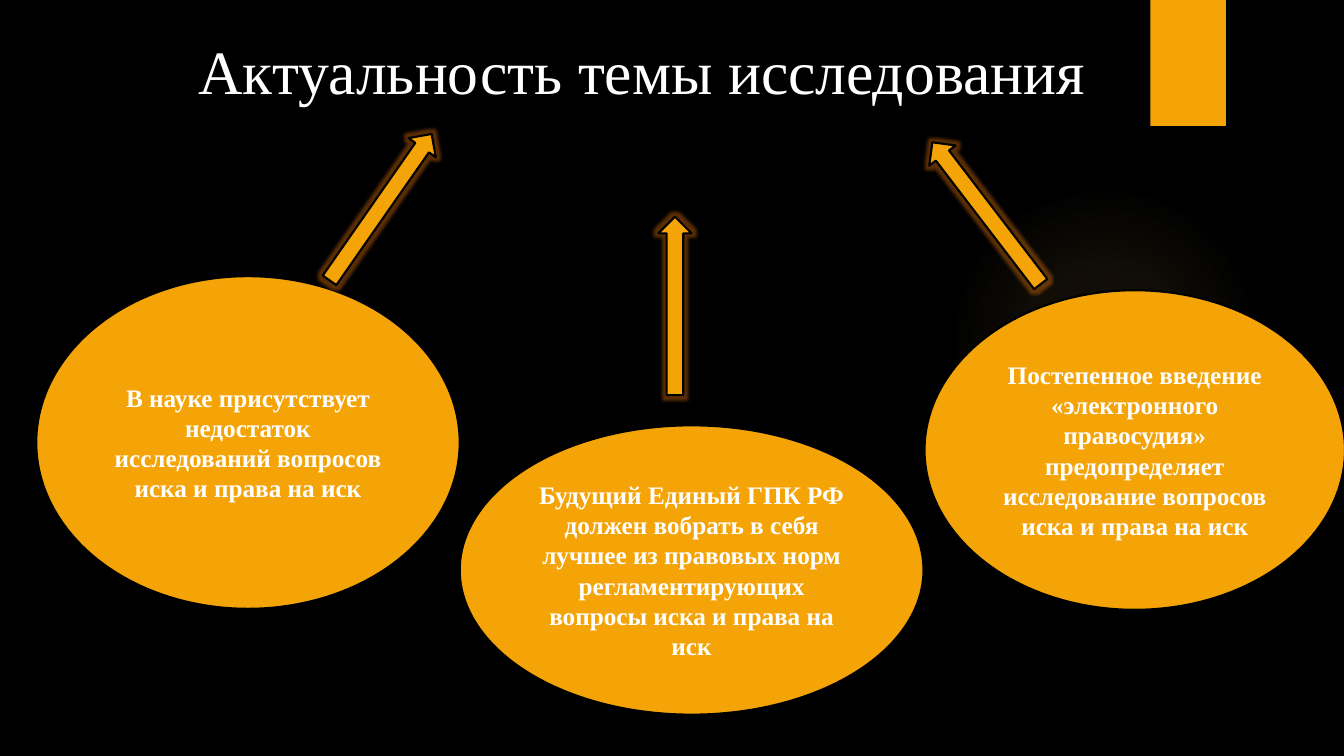
from dataclasses import dataclass

from lxml import etree
from pptx import Presentation
from pptx.dml.color import RGBColor
from pptx.enum.shapes import MSO_SHAPE as Kind
from pptx.enum.text import MSO_ANCHOR as Anchor, PP_ALIGN as Align
from pptx.oxml import parse_xml
from pptx.oxml.ns import qn
from pptx.shapes.autoshape import Shape
from pptx.slide import Slide
from pptx.text.text import TextFrame
from pptx.util import Pt

PX = 9144  # EMU, one hundredth of an inch
FONT = "Times New Roman"
BLACK = RGBColor(0x00, 0x00, 0x00)
WHITE = RGBColor(0xFF, 0xFF, 0xFF)
AMBER = RGBColor(0xF5, 0xA4, 0x08)
PALE = RGBColor(0xFA, 0xC9, 0x6A)
RUST = RGBColor(0xE8, 0x76, 0x0A)
HALO_STOPS = ((0, 7), (36, 6), (69, 0))  # position and opacity, percent
A_NS = "http://schemas.openxmlformats.org/drawingml/2006/main"


@dataclass(frozen=True)
class Box:
    left: int
    top: int
    width: int
    height: int

    def emu(self) -> tuple[int, ...]:
        return tuple(n * PX for n in (self.left, self.top, self.width, self.height))


@dataclass(frozen=True)
class Reason:
    box: Box
    text: str


@dataclass(frozen=True)
class Arrow:
    left: int
    top: int
    angle: float


REASONS = (
    Reason(Box(36, 274, 420, 330),
           "В науке присутствует недостаток исследований вопросов иска и права на иск"),
    Reason(Box(456, 422, 460, 287),
           "Будущий Единый ГПК РФ должен вобрать в себя лучшее из правовых норм "
           "регламентирующих вопросы иска и права на иск"),
    Reason(Box(917, 288, 417, 317),
           "Постепенное введение «электронного правосудия» предопределяет "
           "исследование вопросов иска и права на иск"),
)
ARROWS = (Arrow(289, 189, 304.9), Arrow(581, 287, 270), Arrow(890, 195, 232.6))


def add_shape(slide: Slide, kind: Kind, box: Box, edge: bool = True) -> Shape:
    shape = slide.shapes.add_shape(kind, *box.emu())
    shape.shadow.inherit = False
    shape.fill.solid()
    shape.fill.fore_color.rgb = AMBER
    if edge:
        shape.line.color.rgb = BLACK
        shape.line.width = Pt(1.5)
    else:
        shape.line.fill.background()
    return shape


def set_text(frame: TextFrame, text: str, size: int, bold: bool = False) -> None:
    frame.text = text
    font = frame.paragraphs[0].runs[0].font
    font.name = FONT
    font.size = Pt(size)
    font.bold = bold
    font.color.rgb = WHITE


def add_halo(slide: Slide) -> None:
    """Draw the faint round light, fading outwards."""
    halo = add_shape(slide, Kind.OVAL, Box(941, 183, 308, 308), edge=False)
    stops = "".join(
        f'<a:gs pos="{pos * 1000}"><a:srgbClr val="{PALE}">'
        f'<a:alpha val="{alpha * 1000}"/></a:srgbClr></a:gs>'
        for pos, alpha in HALO_STOPS)
    grad = parse_xml(
        f'<a:gradFill xmlns:a="{A_NS}"><a:gsLst>{stops}</a:gsLst><a:path path="circle">'
        '<a:fillToRect l="50000" t="50000" r="50000" b="50000"/></a:path></a:gradFill>')
    props = halo.element.spPr
    props.replace(props.find(qn("a:solidFill")), grad)


def add_title(slide: Slide) -> None:
    title = slide.shapes.add_textbox(*Box(187, 28, 908, 84).emu())
    title.text_frame.word_wrap = False
    set_text(title.text_frame, "Актуальность темы исследования", 44)


def add_reason(slide: Slide, reason: Reason) -> None:
    frame = add_shape(slide, Kind.OVAL, reason.box).text_frame
    frame.word_wrap = True
    frame.vertical_anchor = Anchor.MIDDLE
    set_text(frame, reason.text, 18, bold=True)
    frame.paragraphs[0].alignment = Align.CENTER


def add_arrow(slide: Slide, arrow: Arrow) -> None:
    """Draw a block arrow with a soft glow around it."""
    shape = add_shape(slide, Kind.RIGHT_ARROW, Box(arrow.left, arrow.top, 177, 33))
    shape.rotation = arrow.angle
    effects = shape.element.spPr.find(qn("a:effectLst"))
    glow = etree.SubElement(effects, qn("a:glow"), rad=str(Pt(5)))
    color = etree.SubElement(glow, qn("a:srgbClr"), val=str(RUST))
    etree.SubElement(color, qn("a:alpha"), val="40000")


def main() -> None:
    deck = Presentation()
    deck.slide_width, deck.slide_height = 1333 * PX, 750 * PX
    slide = deck.slides.add_slide(deck.slide_layouts[6])
    slide.background.fill.solid()
    slide.background.fill.fore_color.rgb = BLACK
    add_halo(slide)
    add_shape(slide, Kind.RECTANGLE, Box(1141, 0, 75, 125), edge=False)
    add_title(slide)
    for reason in REASONS:
        add_reason(slide, reason)
    for arrow in ARROWS:
        add_arrow(slide, arrow)
    deck.save("out.pptx")


if __name__ == "__main__":
    main()
